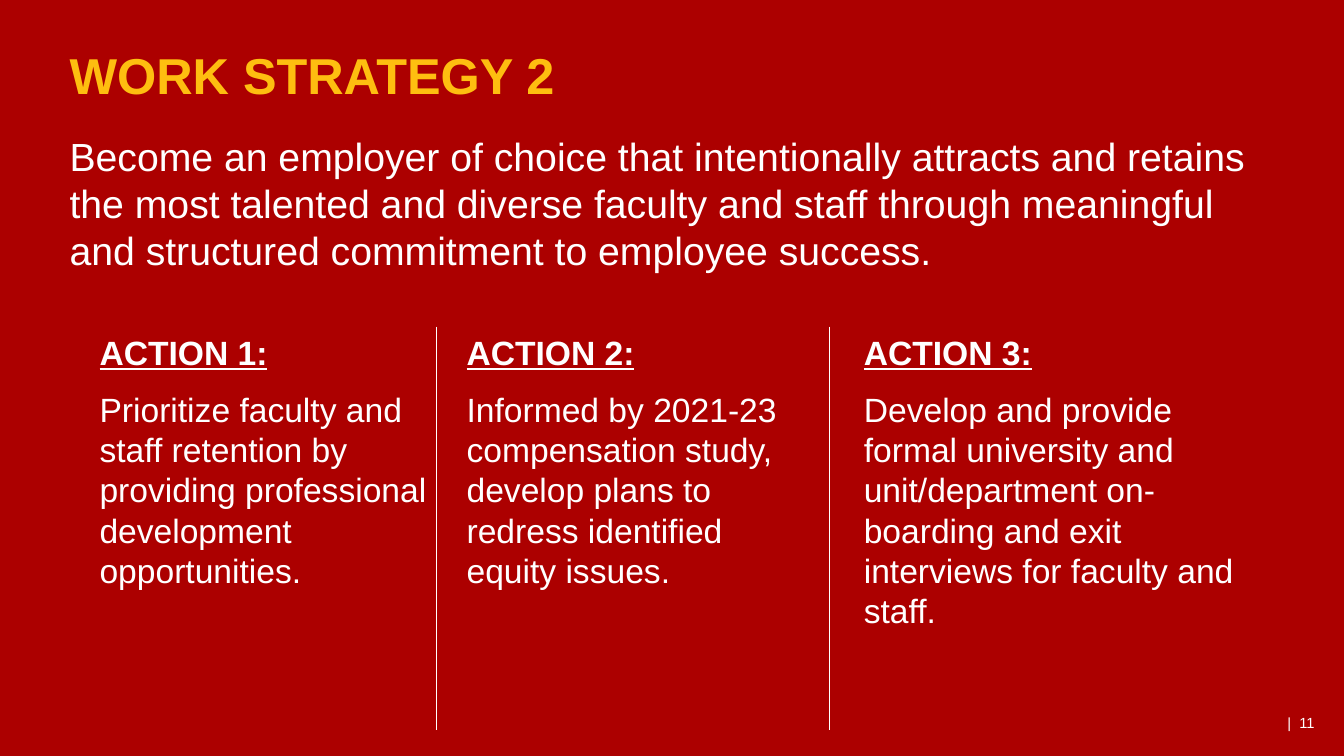
"""Build the Work Strategy 2 slide with its three actions."""
import pptx
import pptx.dml.color
import pptx.enum.text
import pptx.oxml
import pptx.util
from pptx.util import Cm

RED = pptx.dml.color.RGBColor(0xAC, 0x00, 0x00)
GOLD = pptx.dml.color.RGBColor(0xFE, 0xBE, 0x10)
WHITE = pptx.dml.color.RGBColor(0xFF, 0xFF, 0xFF)
ALIGN = pptx.enum.text.PP_ALIGN
ANCHOR = pptx.enum.text.MSO_ANCHOR


def place(holder, left, top, width, height, anchor=ANCHOR.TOP):
    bounds = {"left": Cm(left), "top": Cm(top), "width": Cm(width), "height": Cm(height)}
    for attribute, value in bounds.items():
        setattr(holder, attribute, value)
    frame_format = {"word_wrap": True, "vertical_anchor": anchor,
                    "auto_size": pptx.enum.text.MSO_AUTO_SIZE.NONE}
    for attribute, value in frame_format.items():
        setattr(holder.text_frame, attribute, value)
    return holder.text_frame


def write(paragraph, wording, size, color=WHITE, align=ALIGN.LEFT, **emphasis):
    paragraph.alignment = align
    paragraph.space_before = pptx.util.Pt(0)
    run = paragraph.add_run()
    run.text = wording
    run.font.color.rgb = color
    font_format = {"name": "Arial", "size": pptx.util.Pt(size), "bold": False, **emphasis}
    for attribute, value in font_format.items():
        setattr(run.font, attribute, value)


deck = pptx.Presentation()
deck.slide_width, deck.slide_height = Cm(33.87), Cm(19.05)
slide = deck.slides.add_slide(deck.slide_layouts[0])
slide.background.fill.solid()
slide.background.fill.fore_color.rgb = RED

heading = place(slide.shapes.title, 1.5, 0.56, 22.86, 2.21, ANCHOR.BOTTOM)
write(heading.paragraphs[0], "WORK STRATEGY 2", 36, GOLD, bold=True)

strategy = place(slide.placeholders[1], 1.5, 3.2, 30.89, 3.84)
write(strategy.paragraphs[0],
      "Become an employer of choice that intentionally attracts and retains the most "
      "talented and diverse faculty and staff through meaningful and structured "
      "commitment to employee success.", 28)

page_number = place(slide.shapes.add_textbox(0, 0, 0, 0), 25.76, 17.7, 7.62, 1.02, ANCHOR.MIDDLE)
write(page_number.paragraphs[0], "|  11", 10.5, align=ALIGN.RIGHT)

actions = [
    (2.51, 8.59, "Prioritize faculty and staff retention by providing professional "
                 "development opportunities."),
    (11.76, 9.04, "Informed by 2021-23 compensation study, develop plans to redress "
                  "identified equity issues."),
    (21.77, 9.68, "Develop and provide formal university and unit/department on-boarding "
                  "and exit interviews for faculty and staff."),
]
for number, (left, width, description) in enumerate(actions, start=1):
    action = place(slide.shapes.add_textbox(0, 0, 0, 0), left, 8.23, width, 8.5)
    action.margin_left = 0
    write(action.paragraphs[0], f"ACTION {number}:", 24, bold=True, underline=True)
    action.paragraphs[0].space_after = pptx.util.Pt(12)
    write(action.add_paragraph(), description, 24)

for x in (11, 20.89):
    divider = slide.shapes.add_connector(
        pptx.enum.shapes.MSO_CONNECTOR.STRAIGHT, Cm(x), Cm(8.23), Cm(x), Cm(18.4))
    divider.line.color.rgb = WHITE
    divider.line.width = pptx.util.Pt(0.5)
    divider._element.spPr.append(pptx.oxml.parse_xml(
        '<a:effectLst xmlns:a="http://schemas.openxmlformats.org/drawingml/2006/main"/>'))

deck.save("out.pptx")
